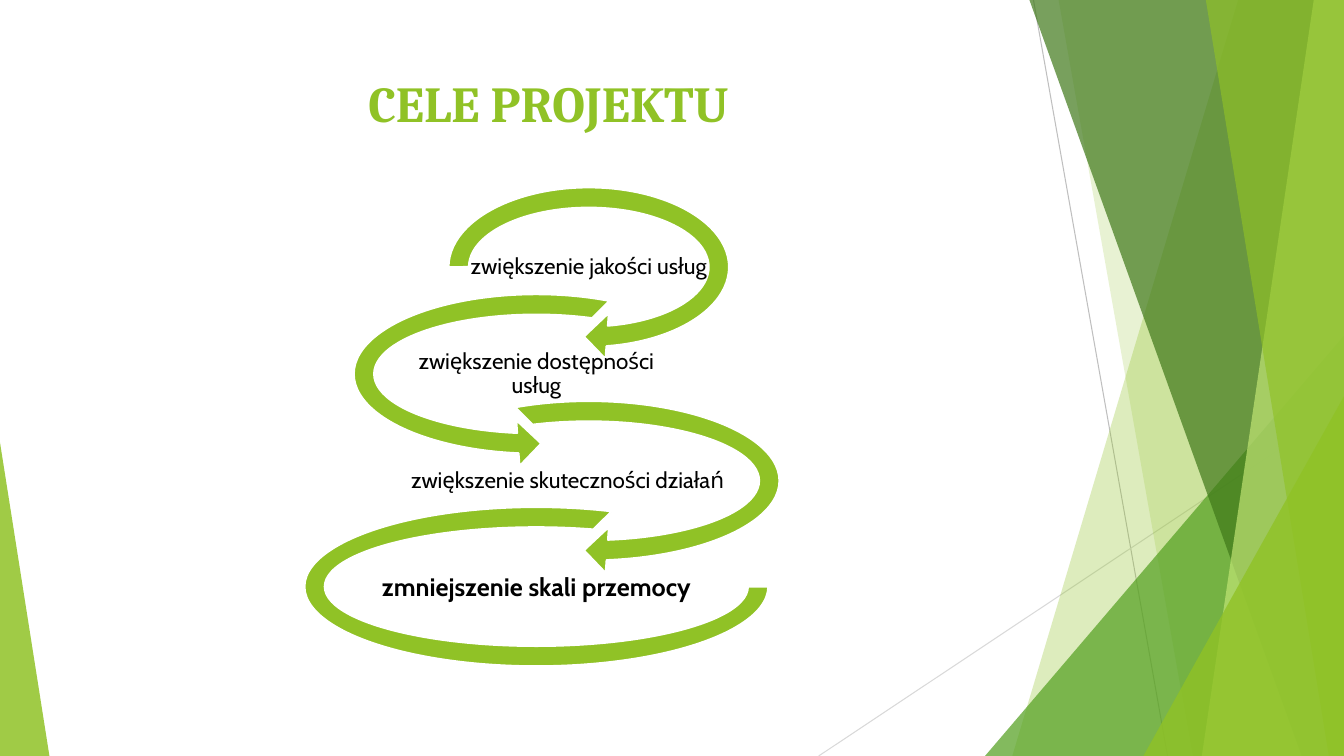
from lxml.etree import SubElement
from pptx import Presentation
from pptx.dml.color import RGBColor
from pptx.enum.shapes import MSO_CONNECTOR, MSO_SHAPE
from pptx.enum.text import MSO_ANCHOR, PP_ALIGN
from pptx.oxml.ns import qn
from pptx.util import Inches, Pt

LIME = RGBColor(0x90, 0xC2, 0x26)
GREEN = RGBColor(0x54, 0xA0, 0x21)
DARK_GREEN = RGBColor(0x3F, 0x78, 0x19)
PALE_LIME = RGBColor(0xC0, 0xE4, 0x74)
GREY = RGBColor(0xBF, 0xBF, 0xBF)
LIGHT_GREY = RGBColor(0xD9, 0xD9, 0xD9)
BLACK = RGBColor(0, 0, 0)
WHITE = RGBColor(0xFF, 0xFF, 0xFF)

WIDTH, HEIGHT = 13.33, 7.5
TITLE = "CELE PROJEKTU"

RAYS = [
    ((10.25, 0), (11.58, HEIGHT), GREY),
    ((WIDTH, 4.03), (8.12, HEIGHT), LIGHT_GREY),
]

# panels: top-left x, bottom-left x, colour, opacity
BACK_PANELS = [(12.28, 10.04, LIME, 30), (10.5, 11.83, LIME, 20)]
FRONT_PANELS = [
    (10.21, 12.91, DARK_GREEN, 70),
    (13.03, 11.92, PALE_LIME, 70),
    (11.96, 13.18, LIME, 65),
]
# triangles: left, top, width, apex position, colour, opacity
BACK_TRIANGLES = [(9.77, 3.33, 3.56, 1, GREEN, 72)]
FRONT_TRIANGLES = [(11.34, 3.93, 1.99, 1, LIME, 80), (0, 4.39, 0.49, 0, LIME, 85)]

RIGHT_CENTER, LEFT_CENTER = 5.84, 5.32
RIGHT_ARROW, LEFT_ARROW = MSO_SHAPE.CIRCULAR_ARROW, MSO_SHAPE.LEFT_CIRCULAR_ARROW
FIRST_LABEL_TOP, ROW_PITCH, LABEL_HEIGHT = 2.4, 1.06, 0.51

# goals: text, size, bold, label centre, label width,
# loop kind, loop centre, loop offset above label, loop width, loop height, adjustments
GOALS = [
    ("zwiększenie jakości usług", 16, False, RIGHT_CENTER, 2.37,
     RIGHT_ARROW, RIGHT_CENTER, 0.67, 3.04, 1.84, (0.1098, 11.42322, 45, 108, 0.125)),
    ("zwiększenie dostępności usług", 16, False, LEFT_CENTER, 2.76,
     LEFT_ARROW, LEFT_CENTER, 0.67, 3.88, 1.84, (0.1098, 11.42322, 63, 189, 0.125)),
    ("zwiększenie skuteczności działań", 16, False, 5.63, 3.35,
     RIGHT_ARROW, RIGHT_CENTER, 0.67, 4.04, 1.84, (0.1098, 11.42322, 45, 135, 0.125)),
    ("zmniejszenie skali przemocy", 18, True, LEFT_CENTER, 3.66,
     MSO_SHAPE.BLOCK_ARC, LEFT_CENTER, 0.55, 4.6, 1.58, (0, 189, 0.1274)),
]


def paint(shape, color, opacity=100):
    shape.shadow.inherit = False
    shape.fill.solid()
    shape.fill.fore_color.rgb = color
    shape.line.fill.background()
    if opacity < 100:
        color_element = shape.fill._xPr.find(qn("a:solidFill"))[0]
        SubElement(color_element, qn("a:alpha")).set("val", str(opacity * 1000))


def write(paragraph, text, font_name, size, color, bold):
    paragraph.alignment = PP_ALIGN.CENTER
    run = paragraph.add_run()
    run.text = text
    run.font.name = font_name
    run.font.size = Pt(size)
    run.font.bold = bold
    run.font.color.rgb = color


def add_ray(slide, start, end, color):
    ray = slide.shapes.add_connector(
        MSO_CONNECTOR.STRAIGHT, *(Inches(value) for value in start + end))
    ray.line.color.rgb = color
    ray.line.width = Pt(0.75)
    SubElement(ray._element.spPr, qn("a:effectLst"))


def add_panel(slide, top_x, bottom_x, color, opacity):
    corners = [(top_x, 0), (WIDTH, 0), (WIDTH, HEIGHT), (bottom_x, HEIGHT)]
    points = [(Inches(x), Inches(y)) for x, y in corners]
    builder = slide.shapes.build_freeform(*points[0])
    builder.add_line_segments(points[1:], close=True)
    paint(builder.convert_to_shape(), color, opacity)


def add_triangle(slide, left, top, width, apex, color, opacity):
    triangle = slide.shapes.add_shape(
        MSO_SHAPE.ISOSCELES_TRIANGLE, Inches(left), Inches(top),
        Inches(width), Inches(HEIGHT - top))
    triangle.adjustments[0] = apex
    paint(triangle, color, opacity)


def add_loop(slide, kind, center, top, width, height, adjustments):
    loop = slide.shapes.add_shape(
        kind, Inches(center - width / 2), Inches(top), Inches(width), Inches(height))
    for index, value in enumerate(adjustments):
        loop.adjustments[index] = value
    paint(loop, LIME)
    loop.line.color.rgb = WHITE
    loop.line.width = Pt(1.5)


def add_label(slide, text, size, bold, center, top, width):
    label = slide.shapes.add_textbox(
        Inches(center - width / 2), Inches(top), Inches(width), Inches(LABEL_HEIGHT))
    frame = label.text_frame
    frame.word_wrap = True
    frame.vertical_anchor = MSO_ANCHOR.MIDDLE
    frame.margin_left = frame.margin_right = Inches(0.01)
    frame.margin_top = frame.margin_bottom = Inches(0.01)
    paragraph = frame.paragraphs[0]
    paragraph.line_spacing = 0.9
    write(paragraph, text, "Cabin", size, BLACK, bold)


def add_title(slide):
    title = slide.shapes.title
    title.left, title.top = Inches(0.74), Inches(0.67)
    title.width, title.height = Inches(9.4), Inches(0.95)
    title.text_frame.vertical_anchor = MSO_ANCHOR.TOP
    write(title.text_frame.paragraphs[0], TITLE, "Cambria", 36, LIME, True)


def main():
    presentation = Presentation()
    presentation.slide_width = Inches(WIDTH)
    presentation.slide_height = Inches(HEIGHT)
    slide = presentation.slides.add_slide(presentation.slide_layouts[5])
    add_title(slide)
    for ray in RAYS:
        add_ray(slide, *ray)
    for panels, triangles in ((BACK_PANELS, BACK_TRIANGLES), (FRONT_PANELS, FRONT_TRIANGLES)):
        for panel in panels:
            add_panel(slide, *panel)
        for triangle in triangles:
            add_triangle(slide, *triangle)
    for row, goal in enumerate(GOALS):
        text, size, bold, center, width, kind, loop_center, rise, *loop_form = goal
        top = FIRST_LABEL_TOP + row * ROW_PITCH
        add_loop(slide, kind, loop_center, top - rise, *loop_form)
        add_label(slide, text, size, bold, center, top, width)
    presentation.save("out.pptx")


if __name__ == "__main__":
    main()
